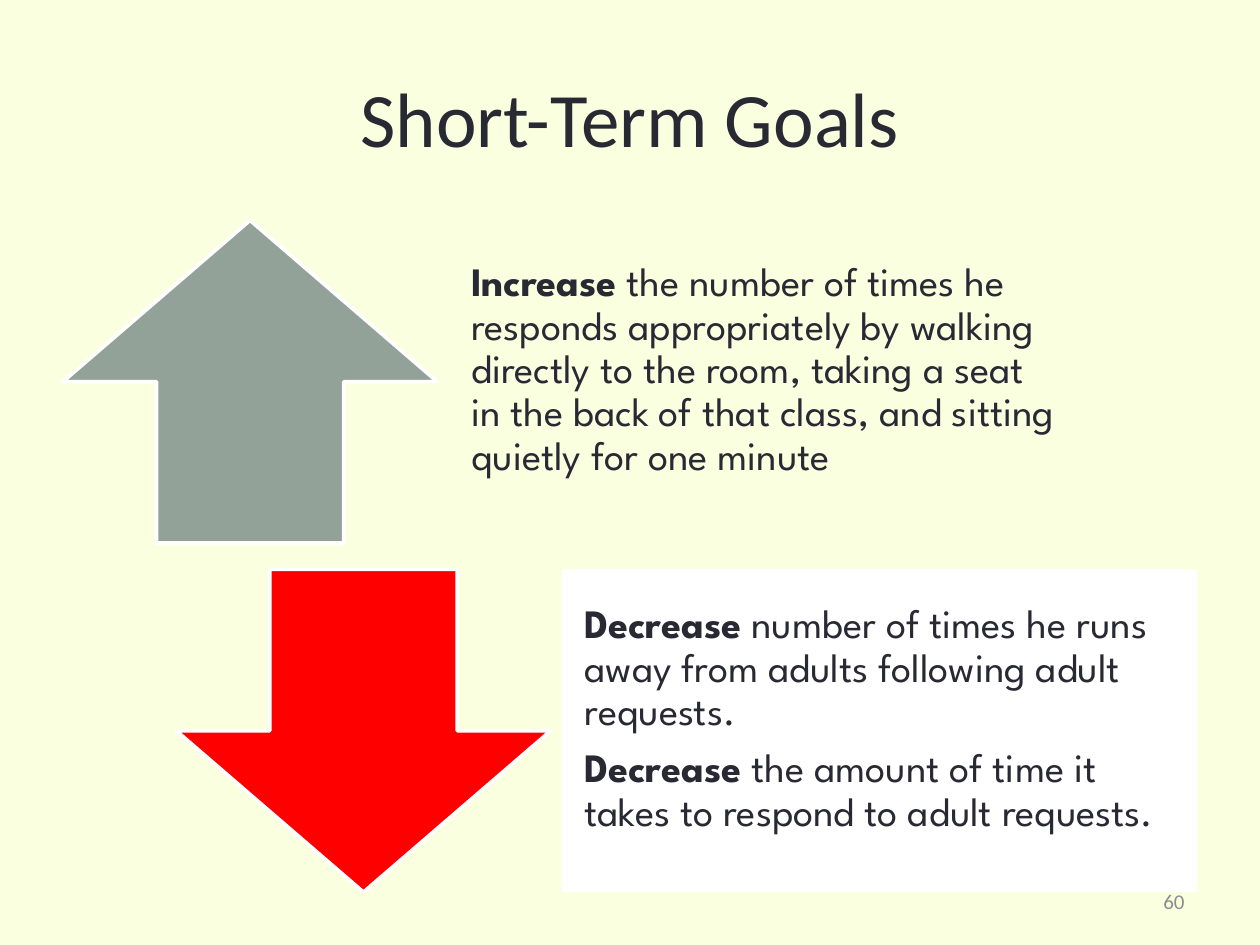
"""Build the Short-Term Goals slide with an increase and a decrease arrow."""
import pptx
import pptx.util
import pptx.dml.color
import pptx.enum.shapes
import pptx.enum.text

Inches, Pt = pptx.util.Inches, pptx.util.Pt
RGBColor = pptx.dml.color.RGBColor
ARROW = pptx.enum.shapes.MSO_SHAPE
ALIGN = pptx.enum.text.PP_ALIGN
MIDDLE = pptx.enum.text.MSO_ANCHOR.MIDDLE

CREAM = RGBColor(0xFA, 0xFF, 0xE0)
INK = RGBColor(0x29, 0x29, 0x34)
SAGE = RGBColor(0x93, 0xA2, 0x99)
RED = RGBColor(0xFF, 0, 0)
WHITE = RGBColor(0xFF, 0xFF, 0xFF)
GRAY = RGBColor(0x8D, 0x8D, 0x8F)

TITLE = "Short-Term Goals"
PAGE_NUMBER = "60"
GOALS = [
    {"arrow": ARROW.UP_ARROW, "color": SAGE, "panel": None, "lines": [
        ("Increase", " the number of times he responds appropriately by walking directly "
                     "to the room, taking a seat in the back of that class, and sitting "
                     "quietly for one minute")]},
    {"arrow": ARROW.DOWN_ARROW, "color": RED, "panel": WHITE, "lines": [
        ("Decrease", " number of times he runs away from adults following adult requests."),
        ("Decrease", " the amount of time it takes to respond to adult requests.")]},
]

WIDTH, HEIGHT = 10, 7.5
MARGIN = WIDTH * 0.05
TOP, ROW_HEIGHT, ROW_STEP = 1.75, 2.56, 2.77
ARROW_WIDTH, TEXT_WIDTH, GAP = 2.97, 5.04, 0.09
INDENT = 0.9

TITLE_FONT = {"name": "Calibri", "size": Pt(44)}
GOAL_FONT = {"name": "League Spartan", "size": Pt(23)}
NUMBER_FONT = {"name": "Calibri", "size": Pt(12)}
GOAL_FRAME = {"word_wrap": True, "vertical_anchor": MIDDLE, "margin_left": Inches(0.18),
              "margin_top": 0, "margin_right": Inches(0.18), "margin_bottom": Inches(0.18)}
PLAIN_FRAME = {"word_wrap": True, "vertical_anchor": MIDDLE}
GOAL_PARAGRAPH = {"alignment": ALIGN.LEFT, "line_spacing": 0.9, "space_after": Pt(8)}


def apply(target, values):
    for key, value in values.items():
        setattr(target, key, value)


def box(left, top, width, height):
    return [Inches(length) for length in (left, top, width, height)]


def add_words(paragraph, words, font, color, bold=False):
    run = paragraph.add_run()
    run.text = words
    apply(run.font, {**font, "bold": bold})
    run.font.color.rgb = color


def write_line(frame, words, font, color, alignment):
    apply(frame, PLAIN_FRAME)
    frame.paragraphs[0].alignment = alignment
    add_words(frame.paragraphs[0], words, font, color)


def add_goal(slide, row, goal):
    left, top = MARGIN + row * INDENT, TOP + row * ROW_STEP
    arrow = slide.shapes.add_shape(goal["arrow"], *box(left, top, ARROW_WIDTH, ROW_HEIGHT))
    arrow.shadow.inherit = False
    arrow.fill.solid()
    arrow.fill.fore_color.rgb = goal["color"]
    arrow.line.color.rgb = WHITE
    arrow.line.width = Pt(2)

    text_left = left + ARROW_WIDTH + GAP
    panel = slide.shapes.add_textbox(*box(text_left, top, TEXT_WIDTH, ROW_HEIGHT))
    if goal["panel"] is not None:
        panel.fill.solid()
        panel.fill.fore_color.rgb = goal["panel"]
    frame = panel.text_frame
    apply(frame, GOAL_FRAME)
    for index, (verb, rest) in enumerate(goal["lines"]):
        paragraph = frame.add_paragraph() if index else frame.paragraphs[0]
        apply(paragraph, GOAL_PARAGRAPH)
        add_words(paragraph, verb, GOAL_FONT, INK, bold=True)
        add_words(paragraph, rest, GOAL_FONT, INK)


def main():
    deck = pptx.Presentation()
    apply(deck, {"slide_width": Inches(WIDTH), "slide_height": Inches(HEIGHT)})
    slide = deck.slides.add_slide(deck.slide_layouts[5])
    slide.background.fill.solid()
    slide.background.fill.fore_color.rgb = CREAM

    title = slide.shapes.title
    title_box = box(MARGIN, 0.3, WIDTH - 2 * MARGIN, 1.25)
    apply(title, dict(zip(("left", "top", "width", "height"), title_box)))
    write_line(title.text_frame, TITLE, TITLE_FONT, INK, ALIGN.CENTER)

    for row, goal in enumerate(GOALS):
        add_goal(slide, row, goal)

    number_width = 2.33
    number = slide.shapes.add_textbox(*box(WIDTH - MARGIN - number_width, 6.95, number_width, 0.4))
    write_line(number.text_frame, PAGE_NUMBER, NUMBER_FONT, GRAY, ALIGN.RIGHT)
    deck.save("out.pptx")


if __name__ == "__main__":
    main()
